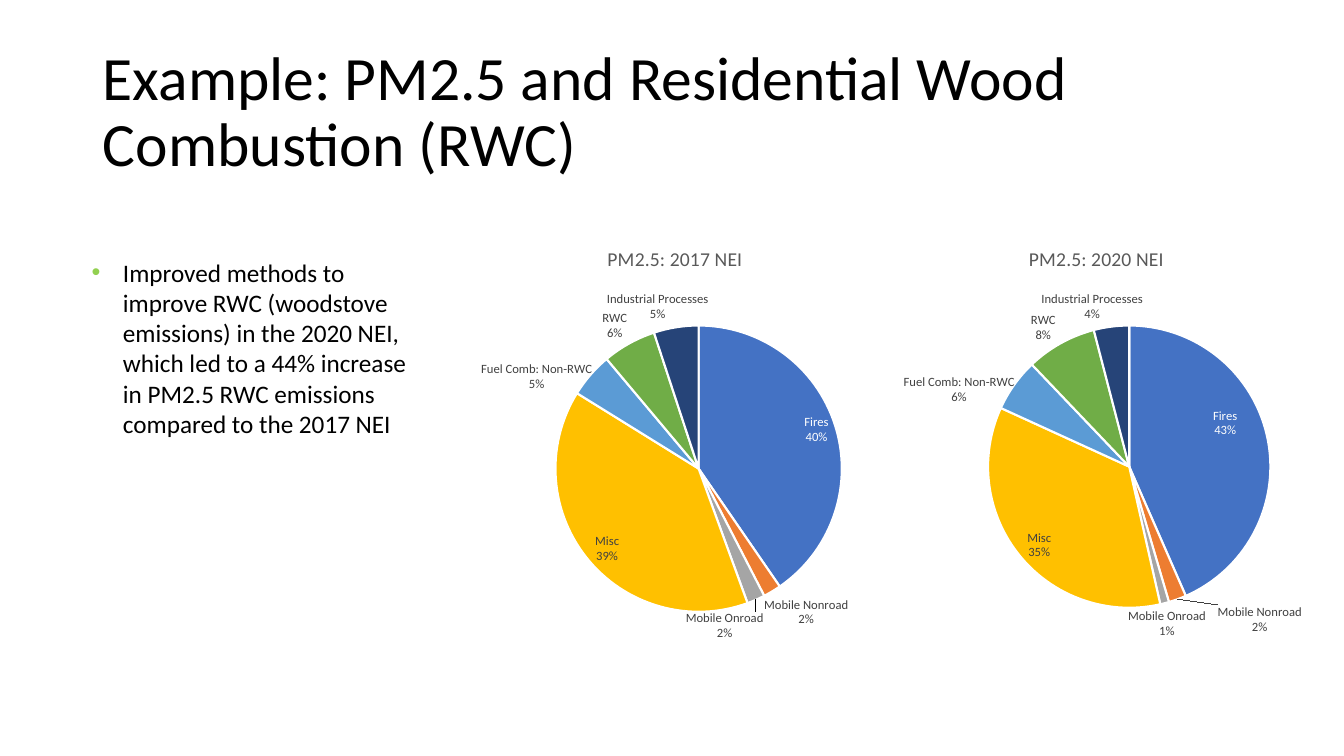
from lxml import etree
from pptx import Presentation
from pptx.chart.data import CategoryChartData
from pptx.dml.color import RGBColor
from pptx.enum.chart import XL_CHART_TYPE, XL_LABEL_POSITION
from pptx.enum.text import MSO_ANCHOR, PP_ALIGN
from pptx.oxml.ns import qn
from pptx.util import Inches, Pt

PIE = XL_CHART_TYPE.PIE
BEST_FIT = XL_LABEL_POSITION.BEST_FIT
INSIDE_END = XL_LABEL_POSITION.INSIDE_END
OUTSIDE_END = XL_LABEL_POSITION.OUTSIDE_END

TITLE = "Example: PM2.5 and Residential Wood Combustion (RWC)"
BULLET = ("Improved methods to improve RWC (woodstove emissions) in the 2020 NEI, "
          "which led to a 44% increase in PM2.5 RWC emissions compared to the 2017 NEI")
CATEGORIES = ["Fires", "Mobile Nonroad", "Mobile Onroad", "Misc",
              "Fuel Comb: Non-RWC", "RWC", "Industrial Processes"]
INSIDE_LABELS = ("Fires", "Misc")

# Inches: box is left, top, width, height; center and radius locate the pie on the slide;
# nudges move a label right and down from its usual place, the rest fit automatically.
CHARTS = [
    {"title": "PM2.5: 2020 NEI", "shares": [43, 2, 1, 35, 6, 8, 4],
     "box": (7.92, 2.26, 5.91, 4.24), "center": (11.2, 4.63), "radius": 1.4,
     "nudges": {"Fires": (-0.24, -0.3), "Misc": (0.03, 0.08),
                "Fuel Comb: Non-RWC": (0.05, 0.23), "RWC": (-0.02, 0.04),
                "Industrial Processes": (0.32, 0.01)}},
    {"title": "PM2.5: 2017 NEI", "shares": [40, 2, 2, 39, 5, 6, 5],
     "box": (3.81, 2.26, 5.77, 4.24), "center": (6.93, 4.65), "radius": 1.42,
     "nudges": {"Fires": (-0.01, -0.13), "Misc": (0.03, 0.08),
                "Mobile Nonroad": (-0.11, 0.01), "Mobile Onroad": (-0.72, 0.06),
                "Fuel Comb: Non-RWC": (0.06, 0.2), "RWC": (0.01, 0.02),
                "Industrial Processes": (0.33, 0)}},
]
TITLE_BOX = (0.92, 0.4, 11.5, 1.45)
BODY_BOX = (0.81, 2.5, 3.48, 2.52)
BULLET_INDENT = Inches(0.31)

THEME = {
    "font": "Calibri", "text": "000000", "bullet": "92D050", "border": "FFFFFF",
    "chart_title": "595959", "label": "404040", "fires_label": "FFFFFF",
    "slices": ["4472C4", "ED7D31", "A5A5A5", "FFC000", "5B9BD5", "70AD47", "264478"],
    "title_size": 44, "body_size": 18, "chart_title_size": 14, "label_size": 9,
}


def style_font(font, size, color):
    font.name = THEME["font"]
    font.size = Pt(THEME[size])
    font.bold = False
    font.color.rgb = RGBColor.from_string(THEME[color])


def fill_placeholder(placeholder, box, text, size):
    placeholder.left, placeholder.top, placeholder.width, placeholder.height = map(Inches, box)
    placeholder.text_frame.text = text
    paragraph = placeholder.text_frame.paragraphs[0]
    paragraph.alignment = PP_ALIGN.LEFT
    paragraph.space_before = Pt(0)
    style_font(paragraph.font, size, "text")
    return paragraph


def add_bullet(paragraph):
    properties = paragraph._p.get_or_add_pPr()
    properties.set("marL", str(BULLET_INDENT))
    properties.set("indent", str(-BULLET_INDENT))
    bullet_color = etree.Element(qn("a:buClr"))
    etree.SubElement(bullet_color, qn("a:srgbClr"), val=THEME["bullet"])
    bullet = etree.Element(qn("a:buChar"), char="•")
    properties.find(qn("a:defRPr")).addprevious(bullet_color)
    bullet_color.addnext(bullet)


def manual_layout(settings):
    layout = etree.Element(qn("c:layout"))
    manual = etree.SubElement(layout, qn("c:manualLayout"))
    for name, value in settings.items():
        text = value if isinstance(value, str) else f"{value:.4f}"
        etree.SubElement(manual, qn(f"c:{name}"), val=text)
    return layout


def place_pie(chart, box, center, radius):
    """Fix the plot area to the square around the pie, as shares of the chart."""
    left, top, width, height = box
    plot_area = chart._chartSpace.chart.plotArea
    for layout in plot_area.findall(qn("c:layout")):
        plot_area.remove(layout)
    plot_area.insert(0, manual_layout({
        "layoutTarget": "inner", "xMode": "edge", "yMode": "edge",
        "x": (center[0] - radius - left) / width,
        "y": (center[1] - radius - top) / height,
        "w": 2 * radius / width, "h": 2 * radius / height}))


def label_slices(series, box, nudges):
    labels = series.data_labels
    style_font(labels.font, "label_size", "label")
    labels.position = BEST_FIT
    for category in nudges:
        label = series.points[CATEGORIES.index(category)].data_label
        color = "fires_label" if category == "Fires" else "label"
        style_font(label.font, "label_size", color)
        label.position = INSIDE_END if category in INSIDE_LABELS else OUTSIDE_END
    group = series._element.find(qn("c:dLbls"))
    slice_labels = group.findall(qn("c:dLbl"))
    for element in [group, *slice_labels]:
        for flag, shown in (("showVal", 0), ("showCatName", 1), ("showPercent", 1)):
            element.find(qn(f"c:{flag}")).set("val", str(shown))
        separator = etree.Element(qn("c:separator"))
        separator.text = "\n"
        element.find(qn("c:showPercent")).getnext().addnext(separator)
    for element in slice_labels:
        index = element.find(qn("c:idx"))
        right, down = nudges[CATEGORIES[int(index.get("val"))]]
        index.addnext(manual_layout({"x": right / box[2], "y": down / box[3]}))


def add_pie(slide, title, shares, box, center, radius, nudges):
    data = CategoryChartData()
    data.categories = CATEGORIES
    data.add_series("Series 1", shares)
    chart = slide.shapes.add_chart(PIE, *map(Inches, box), data).chart
    chart.has_legend = False
    chart.font.name = THEME["font"]
    chart.has_title = True
    chart.chart_title.text_frame.text = title
    style_font(chart.chart_title.text_frame.paragraphs[0].font, "chart_title_size", "chart_title")
    place_pie(chart, box, center, radius)
    chart.plots[0].vary_by_categories = True
    series = chart.plots[0].series[0]
    for index, color in enumerate(THEME["slices"]):
        slice_format = series.points[index].format
        slice_format.fill.solid()
        slice_format.fill.fore_color.rgb = RGBColor.from_string(color)
        slice_format.line.color.rgb = RGBColor.from_string(THEME["border"])
        slice_format.line.width = Pt(1.5)
    label_slices(series, box, nudges)


def main():
    presentation = Presentation()
    presentation.slide_width, presentation.slide_height = Inches(13.33), Inches(7.5)
    slide = presentation.slides.add_slide(presentation.slide_layouts[1])
    title, body = slide.placeholders
    heading = fill_placeholder(title, TITLE_BOX, TITLE, "title_size")
    heading.line_spacing = 0.9
    title.text_frame.vertical_anchor = MSO_ANCHOR.MIDDLE
    add_bullet(fill_placeholder(body, BODY_BOX, BULLET, "body_size"))
    for chart in CHARTS:
        add_pie(slide, **chart)
    presentation.save("out.pptx")


if __name__ == "__main__":
    main()
